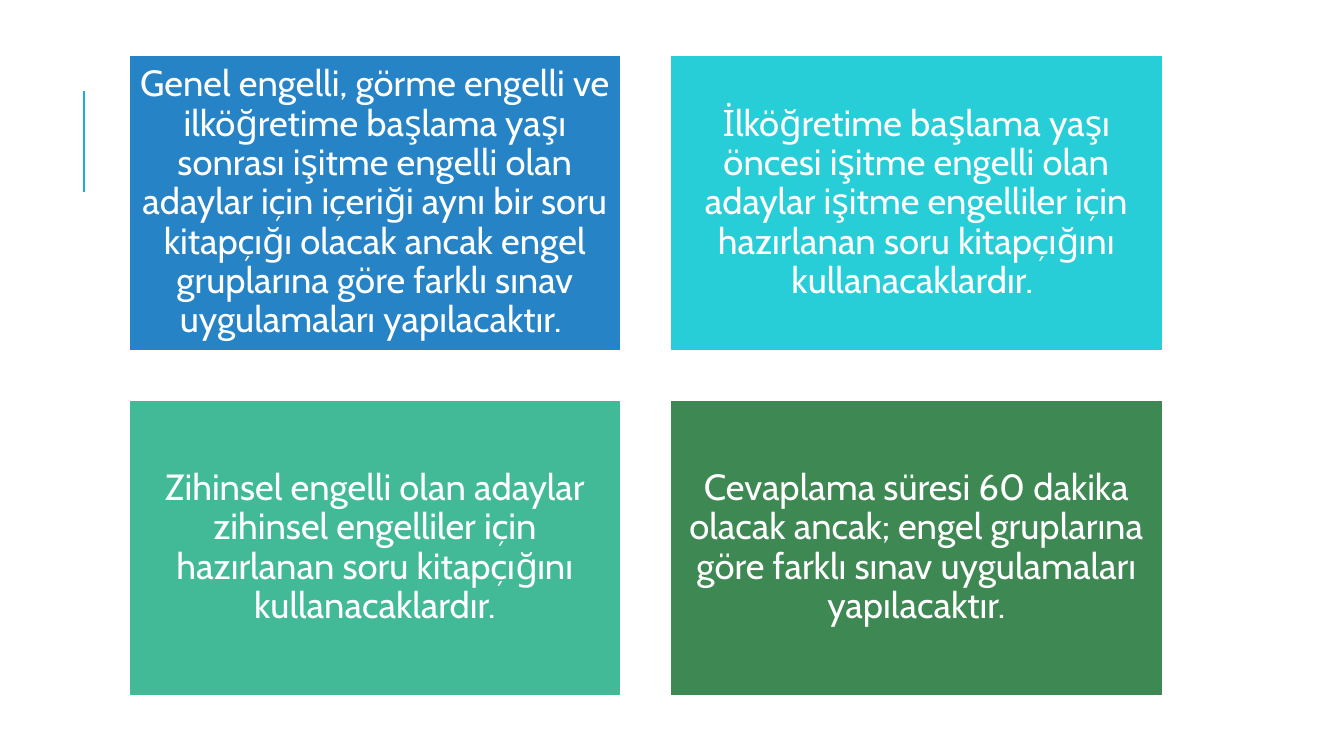
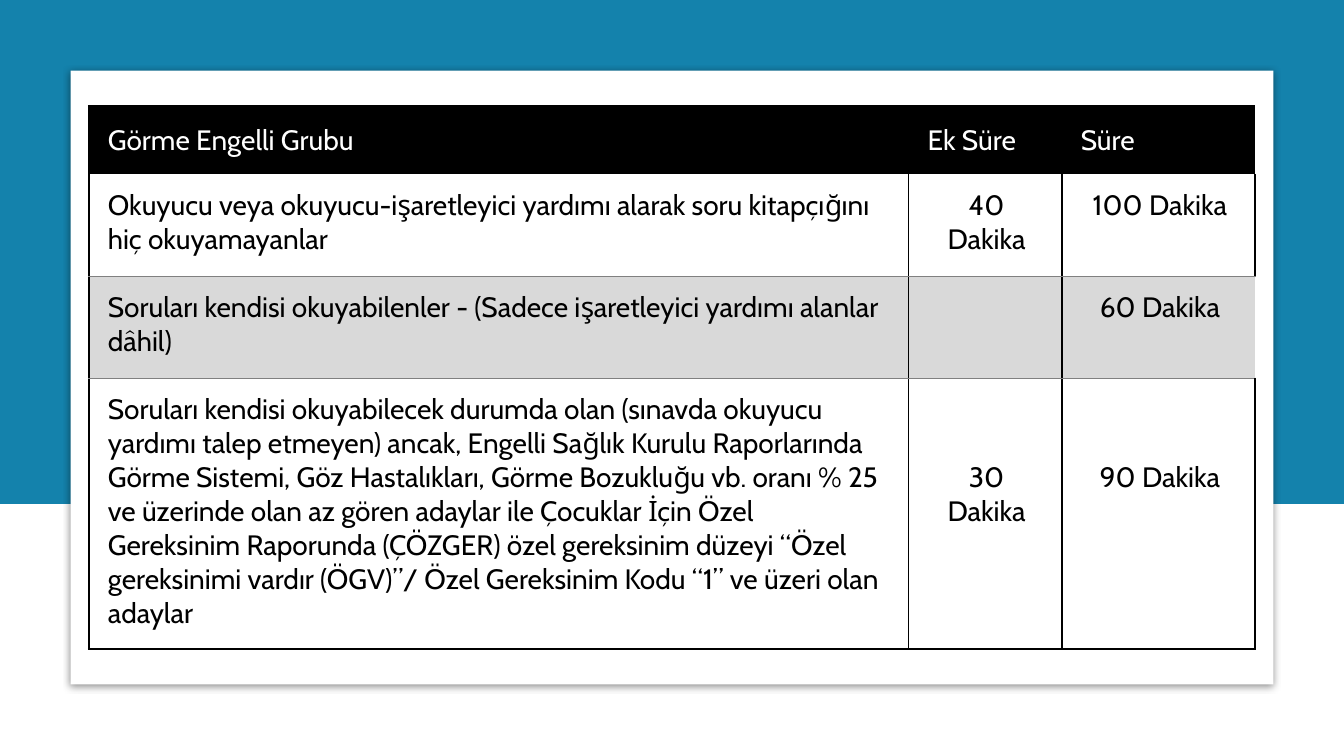
from dataclasses import dataclass

from lxml.etree import SubElement
from pptx import Presentation
from pptx.dml.color import RGBColor
from pptx.enum.shapes import MSO_CONNECTOR, MSO_SHAPE
from pptx.enum.text import MSO_ANCHOR, PP_ALIGN
from pptx.oxml.ns import qn
from pptx.util import Inches, Pt

WIDE, HIGH = 13.33, 7.5
FONT = "Cabin"
COLORS = {
    "white": "FFFFFF", "black": "000000", "gray": "808080", "pale": "D9D9D9",
    "sky": "1CADE4", "band": "1482AC", "blue": "2683C6", "cyan": "27CED7",
    "mint": "42BA97", "green": "3E8853",
}
COLS = (8.13, 1.52, 1.92)
PAD = 0.14
DROP = 0.68


@dataclass(frozen=True)
class Area:
    left: float
    top: float
    width: float
    height: float

    def lengths(self) -> tuple:
        return tuple(Inches(v) for v in (self.left, self.top, self.width, self.height))


@dataclass(frozen=True)
class Card:
    col: int
    row: int
    color: str
    text: str

    def area(self) -> Area:
        return Area(1.28 + self.col * 5.37, 0.55 + self.row * 3.42, 4.88, 2.93)


@dataclass(frozen=True)
class Row:
    height: float
    texts: tuple
    heavy: str
    light: str = ""
    fill: str = ""
    head: bool = False
    open: bool = False
    drop: float = 0


CARDS = (
    Card(0, 0, "blue", "Genel engelli, görme engelli ve ilköğretime başlama yaşı sonrası "
         "işitme engelli olan adaylar için içeriği aynı bir soru kitapçığı olacak ancak "
         "engel gruplarına göre farklı sınav uygulamaları yapılacaktır. "),
    Card(1, 0, "cyan", "İlköğretime başlama yaşı öncesi işitme engelli olan adaylar "
         "işitme engelliler için hazırlanan soru kitapçığını kullanacaklardır. "),
    Card(0, 1, "mint", "Zihinsel engelli olan adaylar zihinsel engelliler için "
         "hazırlanan soru kitapçığını kullanacaklardır."),
    Card(1, 1, "green", "Cevaplama süresi 60 dakika olacak ancak; engel gruplarına göre "
         "farklı sınav uygulamaları yapılacaktır."),
)

ROWS = (
    Row(0.68, ("Görme Engelli Grubu", "Ek Süre", "Süre"), "LT",
        fill="black", head=True, open=True),
    Row(1.01, ("Okuyucu veya okuyucu-işaretleyici yardımı alarak soru kitapçığını hiç "
               "okuyamayanlar", "40 Dakika", "100 Dakika"), "LR", "B"),
    Row(1.01, ("Soruları kendisi okuyabilenler - (Sadece işaretleyici yardımı alanlar dâhil)",
               "", "60 Dakika"), "LR", "T", fill="pale", open=True),
    Row(2.69, ("Soruları kendisi okuyabilecek durumda olan (sınavda okuyucu yardımı talep "
               "etmeyen) ancak, Engelli Sağlık Kurulu Raporlarında Görme Sistemi, Göz "
               "Hastalıkları, Görme Bozukluğu vb. oranı % 25 ve üzerinde olan az gören "
               "adaylar ile Çocuklar İçin Özel Gereksinim Raporunda (ÇÖZGER) özel gereksinim "
               "düzeyi “Özel gereksinimi vardır (ÖGV)”/ Özel Gereksinim Kodu “1” ve üzeri "
               "olan adaylar", "30 Dakika", "90 Dakika"), "LRB", drop=DROP),
)


def tint(name: str) -> RGBColor:
    return RGBColor.from_string(COLORS[name])


def write(frame, text: str, size: float, color: str, align: PP_ALIGN) -> None:
    frame.text = text
    for par in frame.paragraphs:
        par.alignment = align
        par.font.size = Pt(size)
        for run in par.runs:
            run.font.name = FONT
            run.font.size = Pt(size)
            run.font.color.rgb = tint(color)


def block(slide, area: Area, color: str, edge: str = ""):
    shape = slide.shapes.add_shape(MSO_SHAPE.RECTANGLE, *area.lengths())
    shape.shadow.inherit = False
    shape.fill.solid()
    shape.fill.fore_color.rgb = tint(color)
    if edge:
        shape.line.color.rgb = tint(edge)
        shape.line.width = Pt(1.25)
    else:
        shape.line.fill.background()
    return shape


def shade(shape) -> None:
    effects = shape.element.spPr.find(qn("a:effectLst"))
    outer = SubElement(effects, qn("a:outerShdw"), blurRad=str(Pt(5)),
                       dist=str(Pt(1.4)), dir="5400000", algn="t", rotWithShape="0")
    color = SubElement(outer, qn("a:srgbClr"), val=COLORS["black"])
    SubElement(color, qn("a:alpha"), val="43000")


def draw_card(slide, card: Card) -> None:
    shape = block(slide, card.area(), card.color, "white")
    frame = shape.text_frame
    frame.word_wrap = True
    frame.vertical_anchor = MSO_ANCHOR.MIDDLE
    frame.margin_left = frame.margin_right = Inches(0.11)
    frame.margin_top = frame.margin_bottom = Inches(0.11)
    write(frame, card.text, 26, "white", PP_ALIGN.CENTER)
    frame.paragraphs[0].line_spacing = 0.9


def draw_mark(slide) -> None:
    left = Inches(0.83)
    line = slide.shapes.add_connector(MSO_CONNECTOR.STRAIGHT, left, Inches(1.9),
                                      left, Inches(0.9))
    line.line.color.rgb = tint("sky")
    line.line.width = Pt(1.5)
    SubElement(line.element.spPr, qn("a:effectLst"))


def rule(props, side: str, color: str, width: float, place: int) -> None:
    line = SubElement(props, qn(f"a:ln{side}"), w=str(Pt(width)))
    fill = SubElement(line, qn("a:solidFill"))
    SubElement(fill, qn("a:srgbClr"), val=COLORS[color])
    props.insert(place, line)


def edge_cell(props, row: Row, last: bool, first: bool) -> None:
    place = 0
    for side in "LRTB":
        skip = (side == "R" and last and row.open) or (side == "L" and row.head and not first)
        if skip or side not in row.heavy + row.light:
            continue
        color, width = ("black", 1.5) if side in row.heavy else ("gray", 0.5)
        rule(props, side, color, width, place)
        place += 1


def fill_cell(cell, row: Row, col: int) -> None:
    cell.margin_left, cell.margin_right = Inches(0.19), Inches(0.16)
    cell.margin_top = Inches(PAD + (row.drop if col else 0))
    cell.margin_bottom = Inches(PAD)
    cell.vertical_anchor = MSO_ANCHOR.MIDDLE if row.head else MSO_ANCHOR.TOP
    if row.fill:
        cell.fill.solid()
        cell.fill.fore_color.rgb = tint(row.fill)
    else:
        cell.fill.background()
    align = PP_ALIGN.CENTER if col and not row.head else PP_ALIGN.LEFT
    write(cell.text_frame, row.texts[col], 20, "white" if row.head else "black", align)


def draw_table(slide) -> None:
    area = Area(0.88, 1.05, sum(COLS), sum(row.height for row in ROWS))
    frame = slide.shapes.add_table(len(ROWS), len(COLS), *area.lengths())
    table = frame.table
    table.first_row = table.horz_banding = False
    style = next(frame.element.iter(qn("a:tableStyleId")))
    style.text = "{2D5ABB26-0587-4C30-8999-92F81FD0307C}"
    for col, width in enumerate(COLS):
        table.columns[col].width = Inches(width)
    lines = frame.element.iter(qn("a:tr"))
    for index, (row, line) in enumerate(zip(ROWS, lines)):
        table.rows[index].height = Inches(row.height)
        for col, node in enumerate(line.findall(qn("a:tc"))):
            fill_cell(table.cell(index, col), row, col)
            edge_cell(node.find(qn("a:tcPr")), row, col == len(COLS) - 1, col == 0)


def main() -> None:
    deck = Presentation()
    deck.slide_width, deck.slide_height = Inches(WIDE), Inches(HIGH)
    blank = deck.slide_layouts[6]

    groups = deck.slides.add_slide(blank)
    draw_mark(groups)
    for card in CARDS:
        draw_card(groups, card)

    times = deck.slides.add_slide(blank)
    block(times, Area(0, 0, WIDE, HIGH * 2 / 3), "band")
    shade(block(times, Area(0.7, 0.7, WIDE - 1.4, 6.09), "white"))
    draw_table(times)

    deck.save("out.pptx")


if __name__ == "__main__":
    main()
